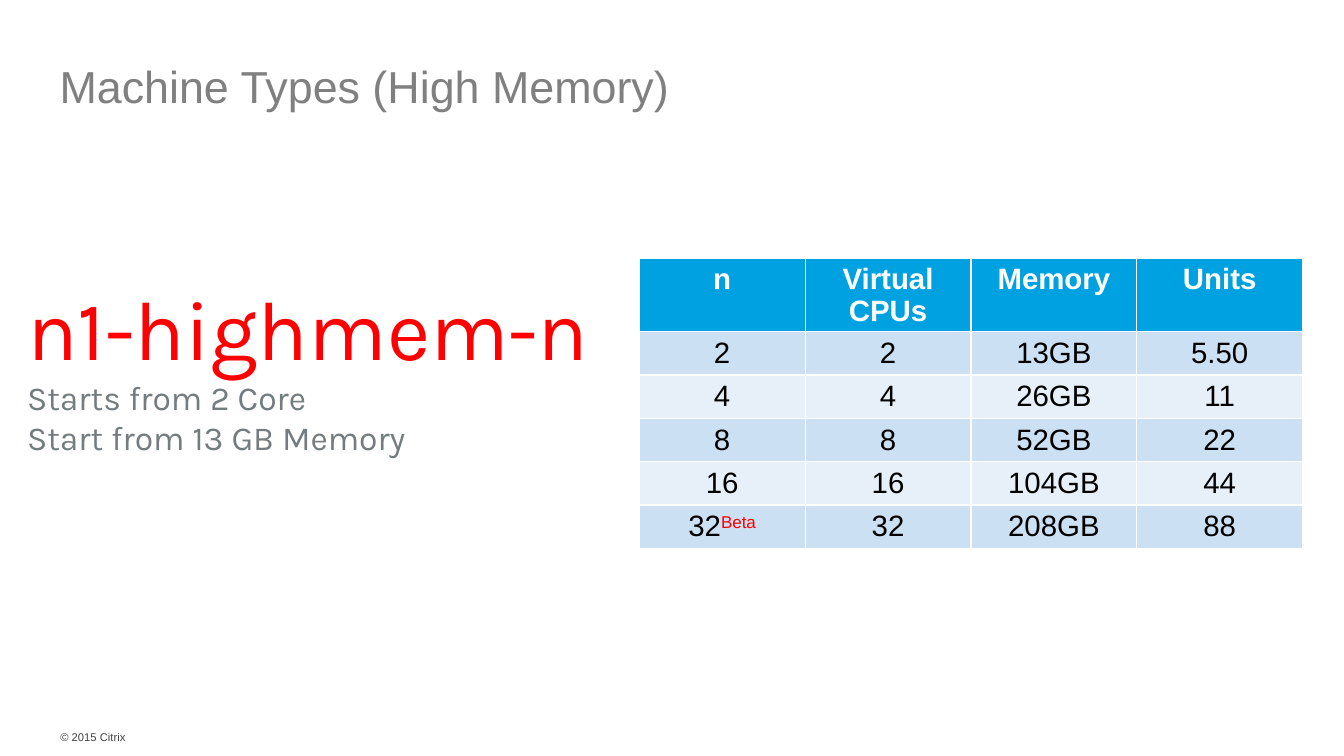
from pptx import Presentation
from pptx.dml.color import RGBColor as RGB
from pptx.enum.text import MSO_ANCHOR as Anchor, MSO_AUTO_SIZE as Fit, PP_ALIGN as Align
from pptx.util import Inches as In, Pt

GREY = RGB(0x80, 0x80, 0x80)
SLATE = RGB(0x74, 0x7C, 0x7F)
DARK = RGB(0x41, 0x41, 0x41)
BLACK = RGB(0, 0, 0)
WHITE = RGB(0xFF, 0xFF, 0xFF)
RED = RGB(0xFF, 0, 0)
BLUE = RGB(0x00, 0xA1, 0xE0)
BANDS = [RGB(0xE7, 0xF0, 0xF9), RGB(0xCC, 0xE0, 0xF3)]


def style(run, size, color, face="Arial", bold=False):
    font = run.font
    font.name, font.size, font.bold = face, Pt(size), bold
    font.color.rgb = color


prs = Presentation()
prs.slide_width, prs.slide_height = In(13.33), In(7.5)
slide = prs.slides.add_slide(prs.slide_layouts[5])

# Title
title = slide.shapes.title
title.left, title.top, title.width, title.height = In(0.49), In(0.09), In(12.37), In(1.08)
frame = title.text_frame
frame.text = "Machine Types (High Memory)"
frame.auto_size = Fit.NONE
frame.vertical_anchor = Anchor.BOTTOM
para = frame.paragraphs[0]
para.alignment = Align.LEFT
para.line_spacing = Pt(32)
style(para.runs[0], 32, GREY)

# Machine types table
rows = [
    ["n", "Virtual CPUs", "Memory", "Units"],
    ["2", "2", "13GB", "5.50"],
    ["4", "4", "26GB", "11"],
    ["8", "8", "52GB", "22"],
    ["16", "16", "104GB", "44"],
    ["32", "32", "208GB", "88"],
]
head, body = 0.73, 0.43
high = head + body * (len(rows) - 1)
table = slide.shapes.add_table(len(rows), 4, In(6.34), In(2.56), In(6.58), In(high)).table
for r, row in enumerate(rows):
    table.rows[r].height = In(body if r else head)
    for c, text in enumerate(row):
        cell = table.cell(r, c)
        cell.margin_top, cell.margin_bottom = In(0.07), In(0.03)
        cell.fill.solid()
        cell.fill.fore_color.rgb = BANDS[r % 2] if r else BLUE
        cell.text_frame.text = text
        para = cell.text_frame.paragraphs[0]
        para.alignment = Align.CENTER
        para.line_spacing = 0.95
        style(para.runs[0], 21, BLACK if r else WHITE, bold=r == 0)

# Raised beta mark on the last size
beta = table.cell(len(rows) - 1, 0).text_frame.paragraphs[0].add_run()
beta.text = "Beta"
style(beta, 21, RED)
beta.font._element.set("baseline", "30000")

# Name pattern and its limits
frame = slide.shapes.add_textbox(In(0.17), In(2.69), In(6.66), In(1.92)).text_frame
frame.word_wrap = True
frame.text = "n1-highmem-n\nStarts from 2 Core\nStart from 13 GB Memory"
for para, size, color in zip(frame.paragraphs, (60, 24, 24), (RED, SLATE, SLATE)):
    style(para.runs[0], size, color, "Karla")

# Copyright line
frame = slide.shapes.add_textbox(In(0.5), In(7.2), In(3.91), In(0.24)).text_frame
frame.word_wrap = True
frame.text = "© 2015 Citrix"
style(frame.paragraphs[0].runs[0], 8, DARK)

prs.save("out.pptx")
